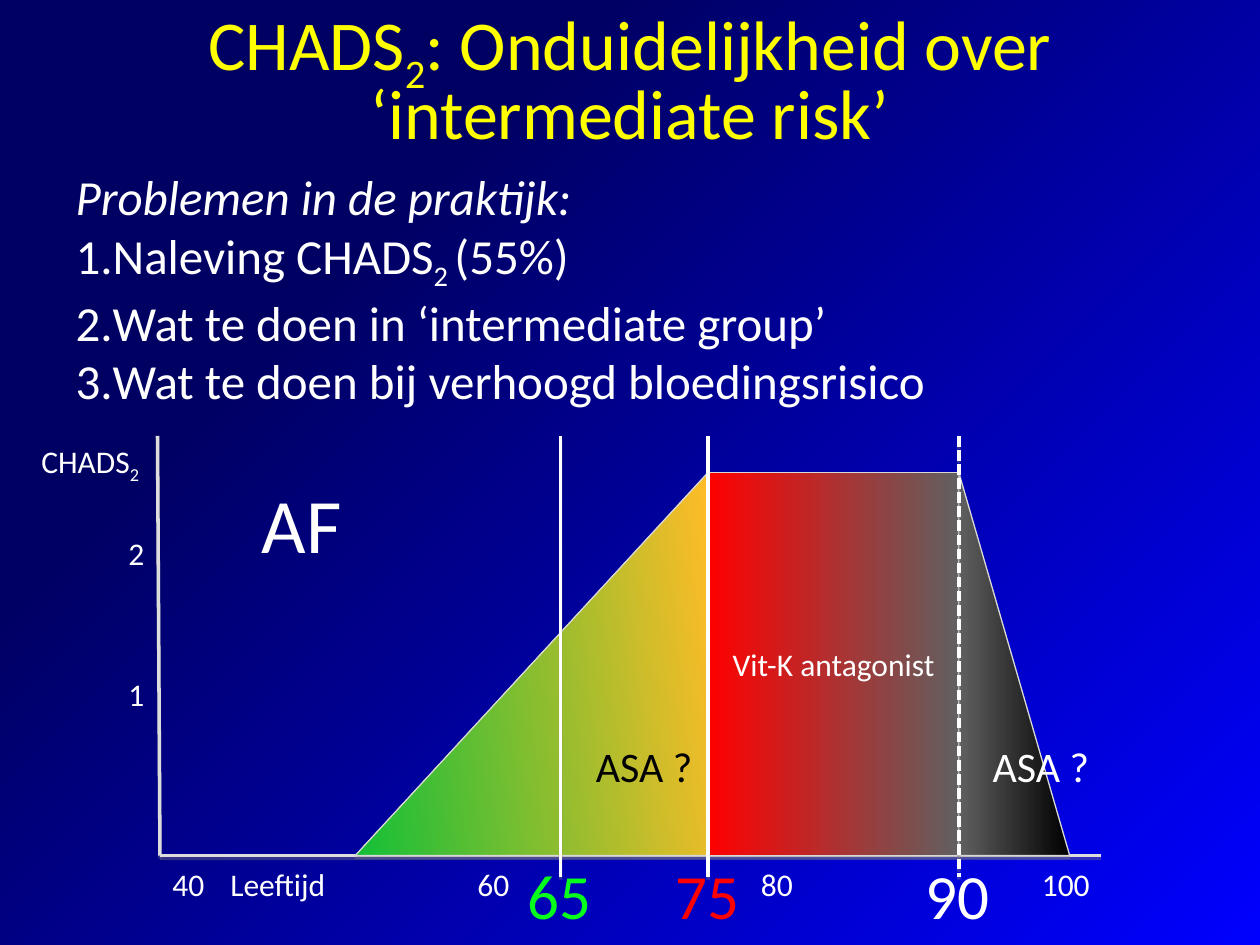
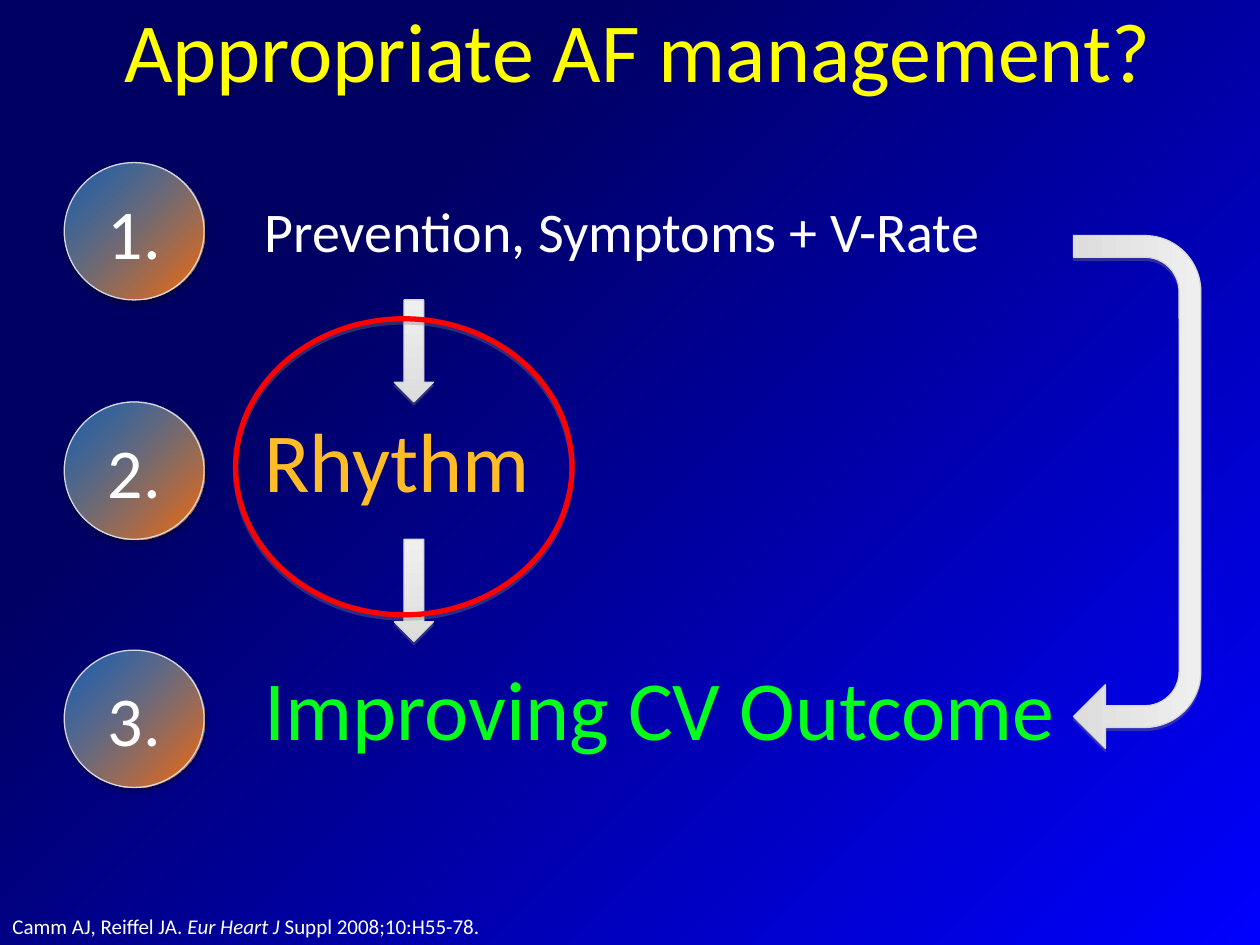
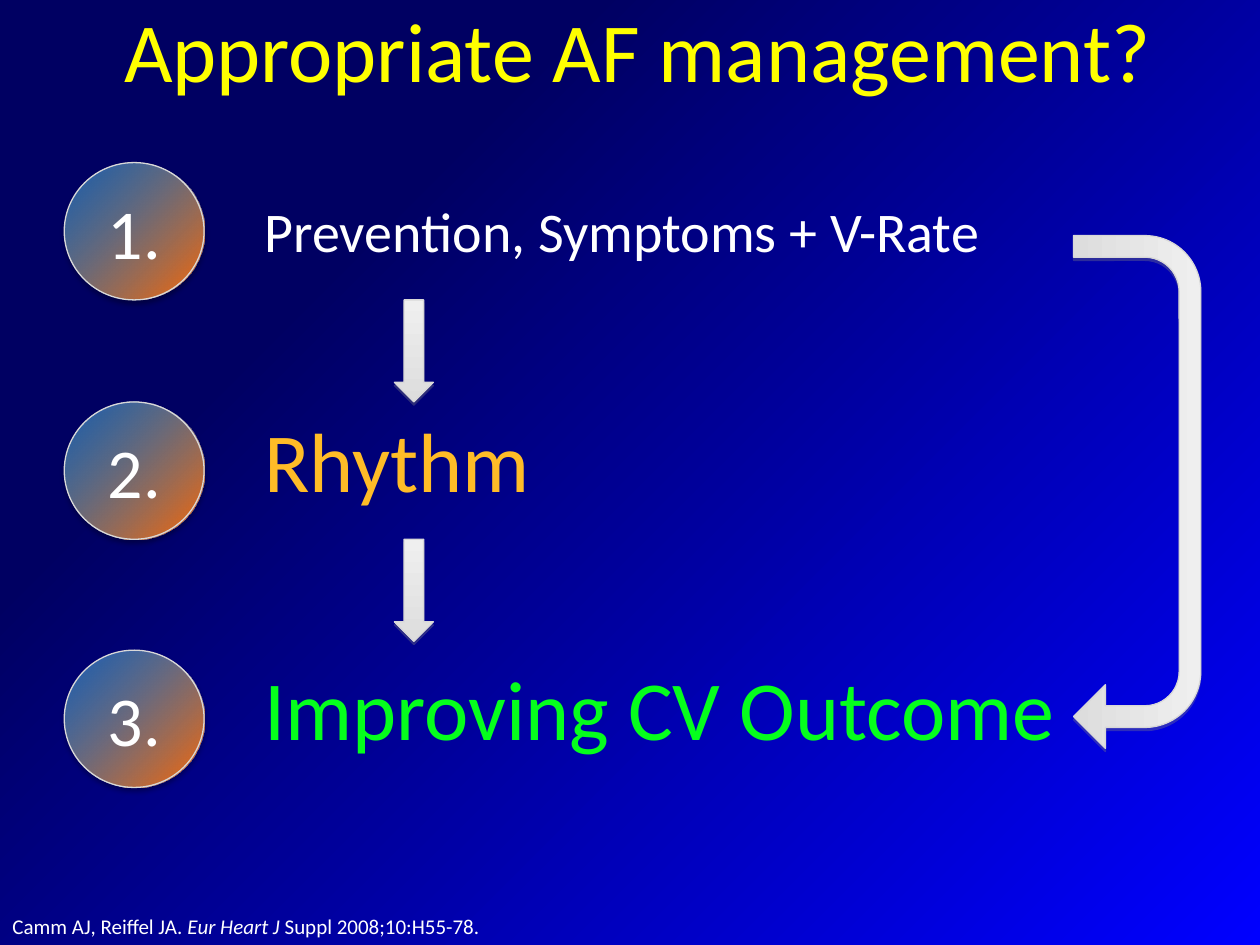
from lxml import etree
from pptx import Presentation
from pptx.dml.color import RGBColor
from pptx.enum.dml import MSO_LINE
from pptx.enum.shapes import MSO_CONNECTOR, MSO_SHAPE
from pptx.enum.text import MSO_ANCHOR, MSO_AUTO_SIZE, PP_ALIGN
from pptx.oxml.ns import qn
from pptx.util import Inches, Pt

STRAIGHT = MSO_CONNECTOR.STRAIGHT
RECTANGLE, ELLIPSE = MSO_SHAPE.RECTANGLE, MSO_SHAPE.OVAL
TRIANGLE = MSO_SHAPE.RIGHT_TRIANGLE
DOWN_ARROW, UTURN_ARROW = MSO_SHAPE.DOWN_ARROW, MSO_SHAPE.U_TURN_ARROW
DASHED = MSO_LINE.SQUARE_DOT
TOP, MIDDLE = MSO_ANCHOR.TOP, MSO_ANCHOR.MIDDLE
LEFT, CENTER = PP_ALIGN.LEFT, PP_ALIGN.CENTER
FIXED, GROW = MSO_AUTO_SIZE.NONE, MSO_AUTO_SIZE.SHAPE_TO_FIT_TEXT

FONT = "Calibri"
COLORS = {
    "blue": "0000FF", "navy": "000062", "yellow": "FFFF00", "white": "FFFFFF",
    "black": "000000", "red": "FF0000", "green": "05FF1C", "amber": "FFBC27",
    "leaf": "13BF38", "gray": "606060", "axis": "DDDDDD", "outline": "D8D8D8",
    "pale": "EFEFEF", "shade": "808080", "orange": "FF6600", "sky": "3AB8FF",
}
SUBSCRIPT = {"baseline": -25}
ITALIC = {"italic": True}


def rgb(name):
    return RGBColor.from_string(COLORS[name])


def add_xml(parent, tag, **attributes):
    return etree.SubElement(parent, qn(tag), {k: str(v) for k, v in attributes.items()})


def add_color(parent, name, alpha=100):
    color = add_xml(parent, "a:srgbClr", val=COLORS[name])
    if alpha < 100:
        add_xml(color, "a:alpha", val=alpha * 1000)


def set_gradient(owner, fill, stops, angle=None):
    """Stops are (position, colour, alpha); without an angle it spreads from bottom right."""
    fill.gradient()
    gradient = next(owner.element.iter(qn("a:gradFill")))
    for child in list(gradient):
        gradient.remove(child)
    stop_list = add_xml(gradient, "a:gsLst")
    for position, name, alpha in stops:
        add_color(add_xml(stop_list, "a:gs", pos=position * 1000), name, alpha)
    if angle is None:
        circle = add_xml(gradient, "a:path", path="circle")
        add_xml(circle, "a:fillToRect", l=100000, t=100000)
    else:
        add_xml(gradient, "a:lin", ang=angle * 60000, scaled=0)


def add_shadow(part, color="shade", alpha=35, blur=0, distance=1.8):
    effects = add_xml(part.element.spPr, "a:effectLst")
    shadow = add_xml(effects, "a:outerShdw", blurRad=Pt(blur), dist=Pt(distance),
                     dir=5400000, rotWithShape=0)
    add_color(shadow, color, alpha)


def write(frame, *paragraphs, size=18, color="white", align=LEFT, anchor=TOP,
          wrap=False, fit=GROW, spacing=None):
    """Each paragraph is a string or a list of strings and (string, format) pairs."""
    frame.word_wrap, frame.auto_size, frame.vertical_anchor = wrap, fit, anchor
    for index, content in enumerate(paragraphs):
        paragraph = frame.add_paragraph() if index else frame.paragraphs[0]
        paragraph.alignment = align
        paragraph.space_before = Pt(0)
        if spacing:
            paragraph.line_spacing = spacing
        for piece in [content] if isinstance(content, str) else content:
            text, style = (piece, {}) if isinstance(piece, str) else piece
            run = paragraph.add_run()
            run.text = text
            run.font.name, run.font.size = FONT, Pt(size)
            run.font.color.rgb = rgb(color)
            if "italic" in style:
                run.font.italic = style["italic"]
            if "baseline" in style:
                run.font._element.set("baseline", str(style["baseline"] * 1000))


def place(part, left, top, width, height):
    part.left, part.top = Inches(left), Inches(top)
    part.width, part.height = Inches(width), Inches(height)


def add_title(slide, content, box, size, spacing=None):
    place(slide.shapes.title, *box)
    write(slide.shapes.title.text_frame, content, size=size, color="yellow",
          align=CENTER, anchor=MIDDLE, wrap=True, fit=FIXED, spacing=spacing)


def add_label(slide, content, left, top, width, height, **style):
    label = slide.shapes.add_textbox(*map(Inches, (left, top, width, height)))
    write(label.text_frame, content, **style)


def add_figure(slide, kind, box, stops=None, angle=None, line="outline",
               line_width=0.75, **shadow):
    figure = slide.shapes.add_shape(kind, *map(Inches, box))
    if stops:
        set_gradient(figure, figure.fill, stops, angle)
    else:
        figure.fill.background()
    figure.line.color.rgb, figure.line.width = rgb(line), Pt(line_width)
    add_shadow(figure, **shadow)
    return figure


def add_line(slide, start, end, color="white", dash=None):
    line = slide.shapes.add_connector(STRAIGHT, *map(Inches, (*start, *end)))
    line.line.color.rgb, line.line.width = rgb(color), Pt(2)
    if dash:
        line.line.dash_style = dash
    add_shadow(line, alpha=38, distance=1.6)


def set_numbering(paragraph, numbered):
    properties = paragraph._p.get_or_add_pPr()
    properties.set("marL", "0")
    properties.set("indent", "0")
    if numbered:
        add_xml(properties, "a:buFont", typeface="+mj-lt")
        add_xml(properties, "a:buAutoNum", type="arabicPeriod")
    else:
        add_xml(properties, "a:buNone")


def blend(first, last):
    return [(0, first, 100), (100, last, 100)]


def build_risk_slide(prs):
    slide = prs.slides.add_slide(prs.slide_layouts[1])
    add_title(slide, ["CHADS", ("2", SUBSCRIPT), ": Onduidelijkheid over ‘intermediate risk’"],
              (0.5, 0.02, 9, 1.25), size=40, spacing=0.8)

    # Numbered problems
    problems = slide.placeholders[1]
    place(problems, 0.5, 1.27, 7.09, 2.46)
    write(problems.text_frame,
          [("Problemen in de praktijk:", ITALIC)],
          ["Naleving CHADS", ("2 ", SUBSCRIPT), "(55%)"],
          "Wat te doen in ‘intermediate group’",
          "Wat te doen bij verhoogd bloedingsrisico", size=28)
    for index, paragraph in enumerate(problems.text_frame.paragraphs):
        set_numbering(paragraph, numbered=index > 0)

    # Axes and treatment areas
    axis_left, axis_bottom, area_top, line_top, line_bottom = 1.27, 6.79, 3.75, 3.46, 6.96
    area_height = axis_bottom - area_top
    add_line(slide, (1.25, line_top), (axis_left, axis_bottom), "axis")
    add_line(slide, (axis_left, axis_bottom), (8.74, axis_bottom), "axis")
    antagonist = add_figure(slide, RECTANGLE, (5.62, area_top, 1.99, area_height),
                            blend("red", "gray"), 0)
    write(antagonist.text_frame, "Vit-K antagonist", align=CENTER, anchor=MIDDLE,
          wrap=True, fit=FIXED)
    rising = add_figure(slide, TRIANGLE, (2.82, area_top, 2.8, area_height),
                        blend("amber", "leaf"), 6)
    rising.element.spPr.xfrm.set("flipH", "1")
    add_figure(slide, TRIANGLE, (7.61, area_top, 0.88, area_height), blend("gray", "black"), 0)

    # Age limits
    for age, x, color, dash in (("65", 4.45, "green", None), ("75", 5.62, "red", None),
                                ("90", 7.61, "white", DASHED)):
        add_line(slide, (x, line_top), (x, line_bottom), dash=dash)
        add_label(slide, age, x - 0.36, 6.75, 0.71, 0.71, size=36, color=color)

    # Axis labels
    for text, left, width in (("40", 1.27, 0.46), ("Leeftijd", 1.73, 0.97), ("60", 3.69, 0.46),
                              ("80", 5.94, 0.46), ("100", 8.17, 0.59)):
        add_label(slide, text, left, 6.82, width, 0.4)
    add_label(slide, ["CHADS", ("2", SUBSCRIPT)], 0.23, line_top, 1.04, 0.4)
    for score, top in (("2", 4.19), ("1", 5.31)):
        add_label(slide, score, 0.92, top, 0.33, 0.4)

    # Area labels
    for left, color in ((4.63, "black"), (7.78, "white")):
        add_label(slide, "ASA ?", left, 5.83, 0.98, 0.51, size=24, color=color)
    add_label(slide, "AF", 1.98, 3.73, 0.84, 0.84, size=44)


def build_management_slide(prs, highlight_rhythm):
    slide = prs.slides.add_slide(prs.slide_layouts[5])
    add_title(slide, "Appropriate AF management?", (0.65, -0.12, 8.82, 1.02), size=48)
    add_label(slide, ["Camm AJ, Reiffel JA. ", ("Eur Heart J ", ITALIC), "Suppl 2008;10:H55-78."],
              0, 7.2, 3.95, 0.3, size=12)

    # Numbered circles
    for number, top in enumerate((1.29, 3.19, 5.16), start=1):
        circle = add_figure(slide, ELLIPSE, (0.51, top, 1.11, 1.09),
                            [(0, "orange", 100), (100, "sky", 49)], color="black", blur=3.1)
        write(circle.text_frame, f"{number}.", size=40, align=CENTER, anchor=MIDDLE,
              wrap=True, fit=FIXED)

    # Steps
    add_label(slide, "Prevention, Symptoms + V-Rate", 2, 1.51, 6.32, 0.64, size=32, wrap=True)
    add_label(slide, "Rhythm", 2, 3.19, 2.33, 0.91, size=48, color="amber")
    add_label(slide, "Improving CV Outcome", 2, 5.16, 6.54, 0.91, size=48, color="green")

    # Arrows between steps
    silver = blend("pale", "axis")
    for top in (2.38, 4.28):
        add_figure(slide, DOWN_ARROW, (3.13, top, 0.31, 0.81), silver, 90)
    bypass = add_figure(slide, UTURN_ARROW, (6.99, 3.4, 4.07, 1.01), silver, 90)
    bypass.rotation = 90
    for index, value in enumerate((0.17, 0.25, 0.25, 0.44, 1)):
        bypass.adjustments[index] = value

    if highlight_rhythm:
        add_figure(slide, ELLIPSE, (1.87, 2.53, 2.67, 2.35), line="red", line_width=3)


def main():
    prs = Presentation()
    prs.slide_width, prs.slide_height = Inches(10), Inches(7.5)
    master = prs.slide_master
    set_gradient(master, master.background.fill, [(0, "blue", 100), (73, "navy", 100)])
    build_risk_slide(prs)
    for highlight_rhythm in (True, False):
        build_management_slide(prs, highlight_rhythm)
    prs.save("out.pptx")


if __name__ == "__main__":
    main()
